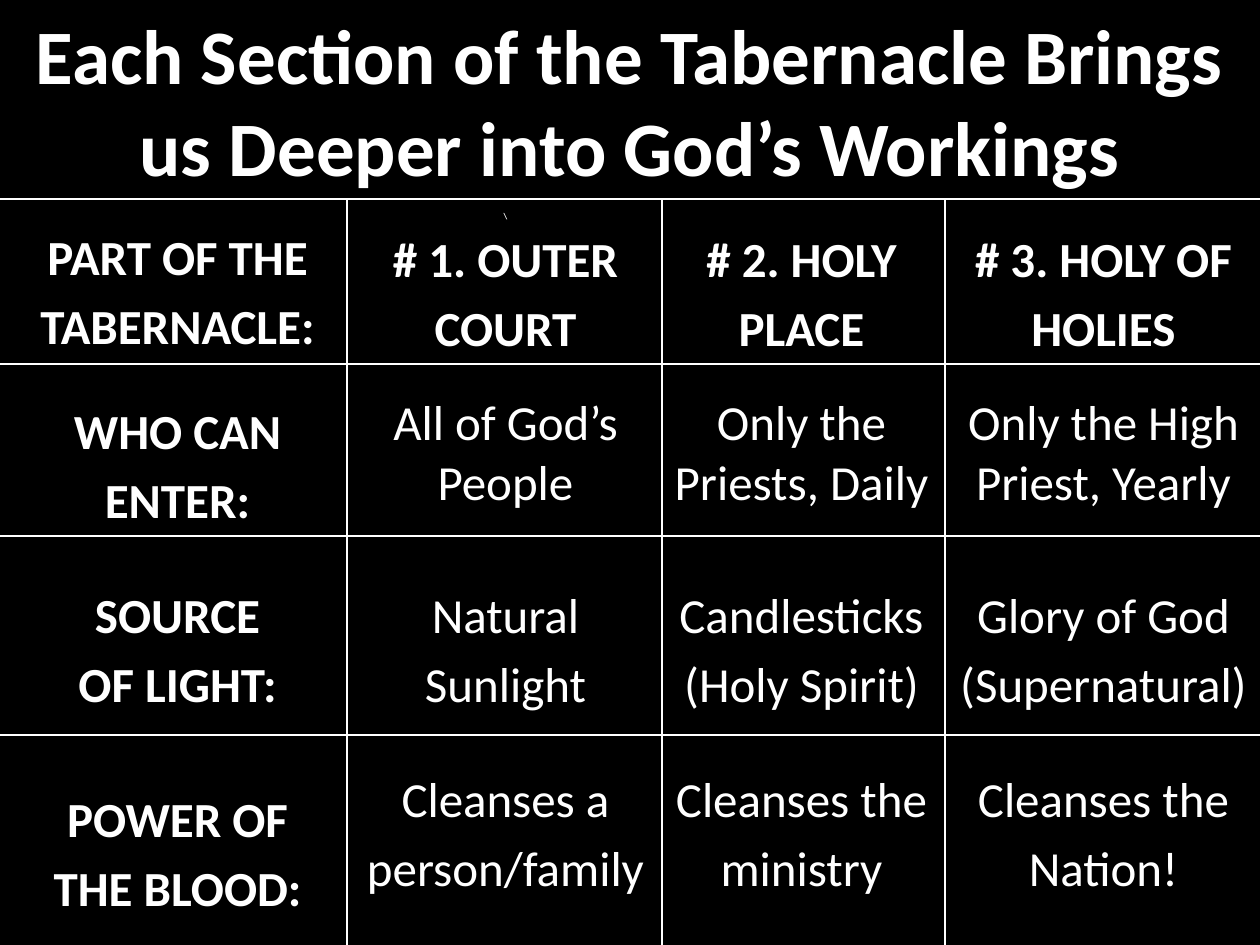
from lxml.etree import SubElement
from pptx import Presentation
from pptx.dml.color import RGBColor
from pptx.enum.shapes import MSO_CONNECTOR
from pptx.enum.text import MSO_ANCHOR, MSO_AUTO_SIZE, PP_ALIGN
from pptx.oxml import parse_xml
from pptx.oxml.ns import nsdecls, qn
from pptx.util import Emu, Pt

BLACK = RGBColor(0, 0, 0)
WHITE = RGBColor(255, 255, 255)
WIDTH, HEIGHT = 1260, 945
TABLE_TOP, ROW_HEIGHT = 210, 184
GRID_TOP = 199
COLUMN_WIDTHS = [355, 301, 291, 313]
COLUMN_LINES = [347, 662, 945]
ROW_LINES = [364, 536, 735, GRID_TOP]
ROWS = [
    [["PART OF THE", "TABERNACLE:"], ["\\", "# 1. OUTER COURT"],
     ["# 2. HOLY", "PLACE"], ["# 3. HOLY OF HOLIES"]],
    [["WHO CAN ENTER:"], ["All of God’s People"],
     ["Only the Priests, Daily"], ["Only the High Priest, Yearly"]],
    [["SOURCE", "OF LIGHT:"], ["Natural", "Sunlight"],
     ["Candlesticks", "(Holy Spirit)"], ["Glory of God", "(Supernatural)"]],
    [["POWER OF", "THE BLOOD:"], ["Cleanses a person/family"],
     ["Cleanses the ministry"], ["Cleanses the Nation!"]],
]
TOP_MARGINS = {(0, 0): 10, (0, 2): 12, (0, 3): 12, (3, 0): 20}


def px(length):
    return Emu(round(length * 914400 / 126))


def assign(target, values):
    for name, value in values.items():
        setattr(target, name, value)


class SlideBuilder:
    font = {"name": "Calibri", "size": Pt(28), "bold": False}

    def __init__(self, slide):
        self.slide = slide
        fill = slide.background.fill
        fill.solid()
        fill.fore_color.rgb = BLACK

    def paragraph(self, para, text, spacing=1.0, **font):
        assign(para, {"alignment": PP_ALIGN.CENTER, "line_spacing": spacing})
        span = para.add_run()
        span.text = text
        assign(span.font, {**self.font, **font})
        span.font.color.rgb = WHITE

    def title(self, text, left, top, width, height):
        box = self.slide.shapes.title
        assign(box, {"left": px(left), "top": px(top),
                     "width": px(width), "height": px(height)})
        assign(box.text_frame, {"word_wrap": True, "auto_size": MSO_AUTO_SIZE.NONE,
                                "vertical_anchor": MSO_ANCHOR.MIDDLE})
        self.paragraph(box.text_frame.paragraphs[0], text, size=Pt(44), bold=True)

    def borders(self, cell):
        properties = cell._tc.get_or_add_tcPr()
        for index, side in enumerate(("lnL", "lnR", "lnT", "lnB")):
            properties.insert(index, parse_xml(
                f'<a:{side} {nsdecls("a")} w="12700"><a:solidFill>'
                f'<a:srgbClr val="{BLACK}"/></a:solidFill></a:{side}>'))

    def cell(self, cell, lines, margin_top, spacing, bold):
        assign(cell, {"margin_left": px(9), "margin_right": px(9),
                      "margin_top": px(margin_top), "margin_bottom": 0,
                      "vertical_anchor": MSO_ANCHOR.TOP})
        cell.fill.background()
        self.borders(cell)
        frame = cell.text_frame
        for index, text in enumerate(lines):
            para = frame.add_paragraph() if index else frame.paragraphs[0]
            size = Pt(5) if text == "\\" else Pt(28)
            self.paragraph(para, text, spacing, size=size, bold=bold)

    def table(self, rows, top, row_height):
        table = self.slide.shapes.add_table(
            len(rows), len(COLUMN_WIDTHS), 0, px(top),
            px(WIDTH), px(row_height * len(rows))).table
        assign(table, {"first_row": False, "horz_banding": False})
        for column, width in zip(table.columns, COLUMN_WIDTHS):
            column.width = px(width)
        for row, entries in enumerate(rows):
            for column, lines in enumerate(entries):
                spacing = 1.0 if row == 1 and column else 1.15
                self.cell(table.cell(row, column), lines,
                          TOP_MARGINS.get((row, column), 0), spacing,
                          row == 0 or column == 0)

    def line(self, *ends):
        connector = self.slide.shapes.add_connector(
            MSO_CONNECTOR.STRAIGHT, *map(px, ends))
        connector.line.color.rgb = WHITE
        connector.line.width = Pt(0.75)
        SubElement(connector._element.spPr, qn("a:effectLst"))


def main():
    deck = Presentation()
    assign(deck, {"slide_width": px(WIDTH), "slide_height": px(HEIGHT)})
    page = SlideBuilder(deck.slides.add_slide(deck.slide_layouts[5]))
    page.title("Each Section of the Tabernacle Brings us Deeper into God’s Workings",
               0, 21, WIDTH, 158)
    page.table(ROWS, TABLE_TOP, ROW_HEIGHT)
    for x in COLUMN_LINES:
        page.line(x, GRID_TOP, x, HEIGHT)
    for y in ROW_LINES:
        page.line(0, y, WIDTH, y)
    deck.save("out.pptx")


if __name__ == "__main__":
    main()
